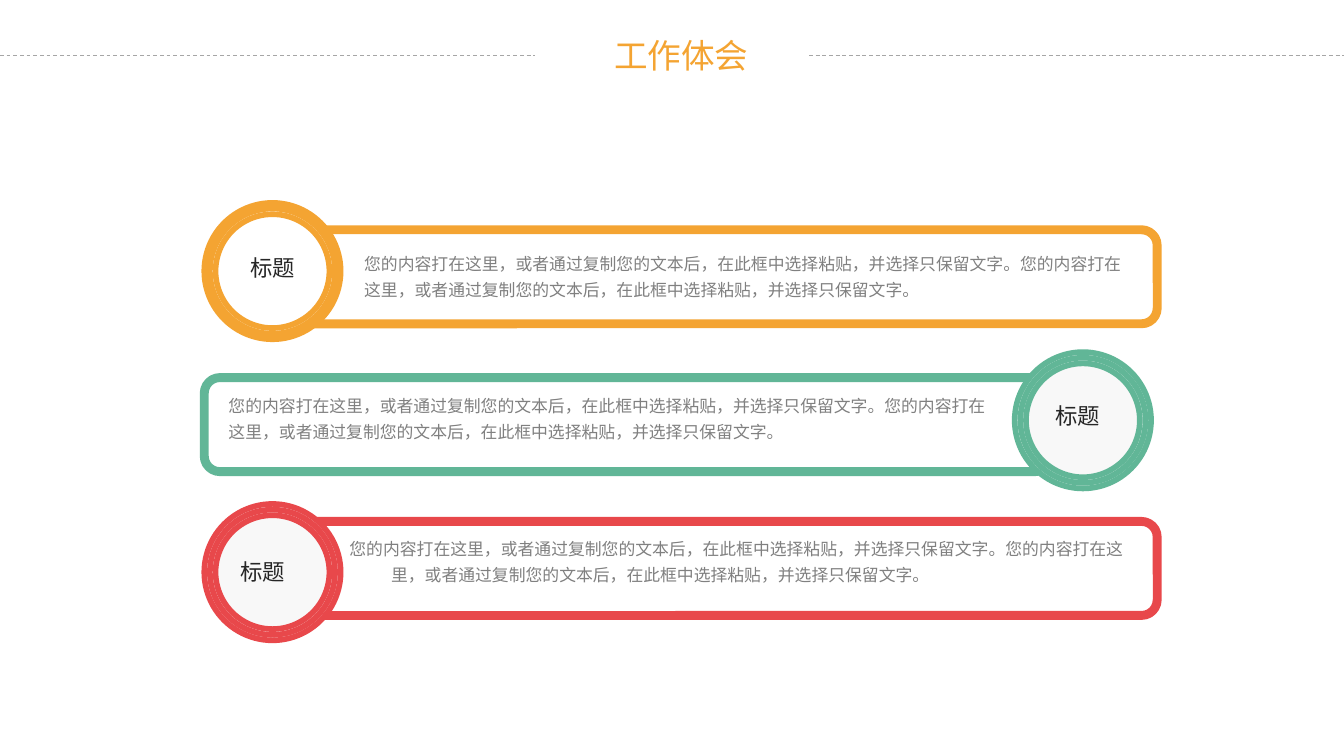
import dataclasses

import lxml.etree
import pptx
import pptx.dml.color
import pptx.enum.dml
import pptx.enum.shapes
import pptx.enum.text
import pptx.oxml.ns
import pptx.util

COLUMNS, ROWS = 100, 56.25
CELL = pptx.util.Inches(0.1)
ALIGN = pptx.enum.text.PP_ALIGN
SHAPE = pptx.enum.shapes.MSO_SHAPE
SENTENCE = "您的内容打在这里，或者通过复制您的文本后，在此框中选择粘贴，并选择只保留文字。"


@dataclasses.dataclass(frozen=True)
class Theme:
    """Colours, fonts and sizes of the page."""

    orange: str = "F4A432"
    green: str = "61B697"
    red: str = "E8484B"
    white: str = "FFFFFF"
    pale: str = "F8F8F8"
    dark: str = "262626"
    grey: str = "808080"
    rule: str = "A6A6A6"
    latin: str = "Calibri"
    chinese: str = "Noto Sans CJK SC"
    title_size: float = 18
    label_size: float = 12
    body_size: float = 9
    panel_line: float = 4.75
    ring_line: float = 3
    rule_line: float = 0.5


THEME = Theme()


@dataclasses.dataclass(frozen=True)
class Item:
    """One panel with its medallion, label and body, placed in grid cells."""

    colour: str
    fills: tuple
    panel: tuple
    medallion: tuple
    label: tuple
    body: tuple
    label_align: ALIGN = ALIGN.LEFT
    indent: float = 0


ITEMS = (
    Item(THEME.orange, (THEME.orange, THEME.white, None), (22.2, 17.1, 63.9, 7),
         (15.2, 15.1), (15.3, 18.5, 10, 2.8), (26.4, 18, 58.6, 4.7), ALIGN.CENTER),
    Item(THEME.green, (THEME.pale, None, None), (15.2, 28.1, 63, 7),
         (75.5, 26.2), (77.8, 29.5, 8.2, 2.8), (16.3, 28.6, 58.8, 6.2)),
    Item(THEME.red, (THEME.pale, None, None), (22.2, 38.8, 63.9, 7),
         (15.2, 37.5), (17.2, 41.1, 9.4, 2.8), (25.3, 39.2, 59.8, 4.7), indent=3.1),
)


def cells(*values):
    """Turn grid cells into slide lengths."""
    return [round(value * CELL) for value in values]


def rgb(colour):
    """Make a colour from its hexadecimal text."""
    return pptx.dml.color.RGBColor.from_string(colour)


def write(box, text, size, colour, font, align):
    """Write one styled paragraph into a box and return it."""
    frame = box.text_frame
    frame.text = text
    frame.auto_size = pptx.enum.text.MSO_AUTO_SIZE.NONE
    frame.vertical_anchor = pptx.enum.text.MSO_ANCHOR.TOP
    frame.margin_left = frame.margin_right = pptx.util.Inches(0.07)
    frame.margin_top = frame.margin_bottom = pptx.util.Inches(0.04)
    frame.word_wrap = True
    para = frame.paragraphs[0]
    para.alignment = align
    for span in para.runs:
        span.font.size = pptx.util.Pt(size)
        span.font.name = font
        span.font.color.rgb = rgb(colour)
        east = lxml.etree.SubElement(span.font._element, pptx.oxml.ns.qn("a:ea"))
        east.set("typeface", THEME.chinese)
    return para


def add_title(page, text):
    """Place and format the title."""
    title = page.shapes.title
    title.left, title.top, title.width, title.height = cells(44.8, 2.2, 11.6, 3.8)
    write(title, text, THEME.title_size, THEME.orange, THEME.latin, ALIGN.RIGHT)
    title.text_frame.word_wrap = False


def add_rule(page, start, end, row):
    """Draw a dashed horizontal rule."""
    rule = page.shapes.add_connector(
        pptx.enum.shapes.MSO_CONNECTOR.STRAIGHT, *cells(start, row, end, row))
    rule.line.color.rgb = rgb(THEME.rule)
    rule.line.width = pptx.util.Pt(THEME.rule_line)
    rule.line.dash_style = pptx.enum.dml.MSO_LINE.DASH
    lxml.etree.SubElement(rule._element.spPr, pptx.oxml.ns.qn("a:effectLst"))


def add_outline(shapes, kind, place, colour, width, fill=None):
    """Add an outlined shape with an optional fill."""
    shape = shapes.add_shape(kind, *cells(*place))
    shape.shadow.inherit = False
    shape.line.color.rgb = rgb(colour)
    shape.line.width = pptx.util.Pt(width)
    if fill:
        shape.fill.solid()
        shape.fill.fore_color.rgb = rgb(fill)
    else:
        shape.fill.background()


def add_medallion(page, item, diameter=10.15, step=0.42):
    """Group concentric rings, each one step inside the last."""
    group = page.shapes.add_group_shape()
    left, top = item.medallion
    for index, fill in enumerate(item.fills):
        inset = index * step
        size = diameter - 2 * inset
        add_outline(group.shapes, SHAPE.OVAL, (left + inset, top + inset, size, size),
                    item.colour, THEME.ring_line, fill)


def add_text(page, place, text, size, colour, align=ALIGN.LEFT):
    """Add a wrapped text box and return its paragraph."""
    box = page.shapes.add_textbox(*cells(*place))
    return write(box, text, size, colour, THEME.chinese, align)


def add_item(page, item):
    """Draw a panel, its medallion and its texts."""
    add_outline(page.shapes, SHAPE.ROUNDED_RECTANGLE, item.panel,
                item.colour, THEME.panel_line)
    add_medallion(page, item)
    add_text(page, item.label, "标题", THEME.label_size, THEME.dark, item.label_align)
    para = add_text(page, item.body, SENTENCE * 2, THEME.body_size, THEME.grey)
    para.line_spacing = 1.3
    if item.indent:
        margin, = cells(item.indent)
        properties = para._p.get_or_add_pPr()
        properties.set("marL", str(margin))
        properties.set("indent", str(-margin))


def main():
    """Build and save the deck."""
    deck = pptx.Presentation()
    deck.slide_width, deck.slide_height = cells(COLUMNS, ROWS)
    page = deck.slides.add_slide(deck.slide_layouts[5])
    add_title(page, "工作体会")
    for start, end in ((0, 39.8), (60.2, COLUMNS)):
        add_rule(page, start, end, 4.1)
    for item in ITEMS:
        add_item(page, item)
    deck.save("out.pptx")


if __name__ == "__main__":
    main()
